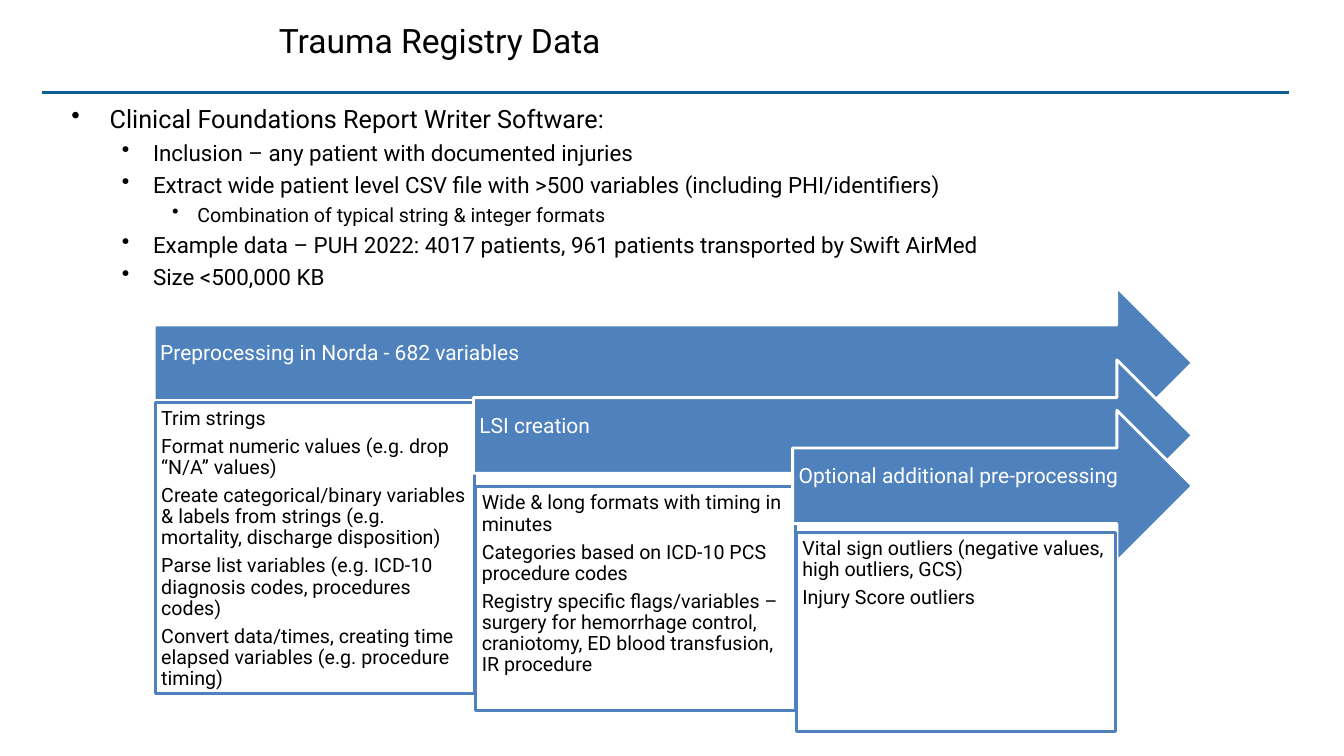
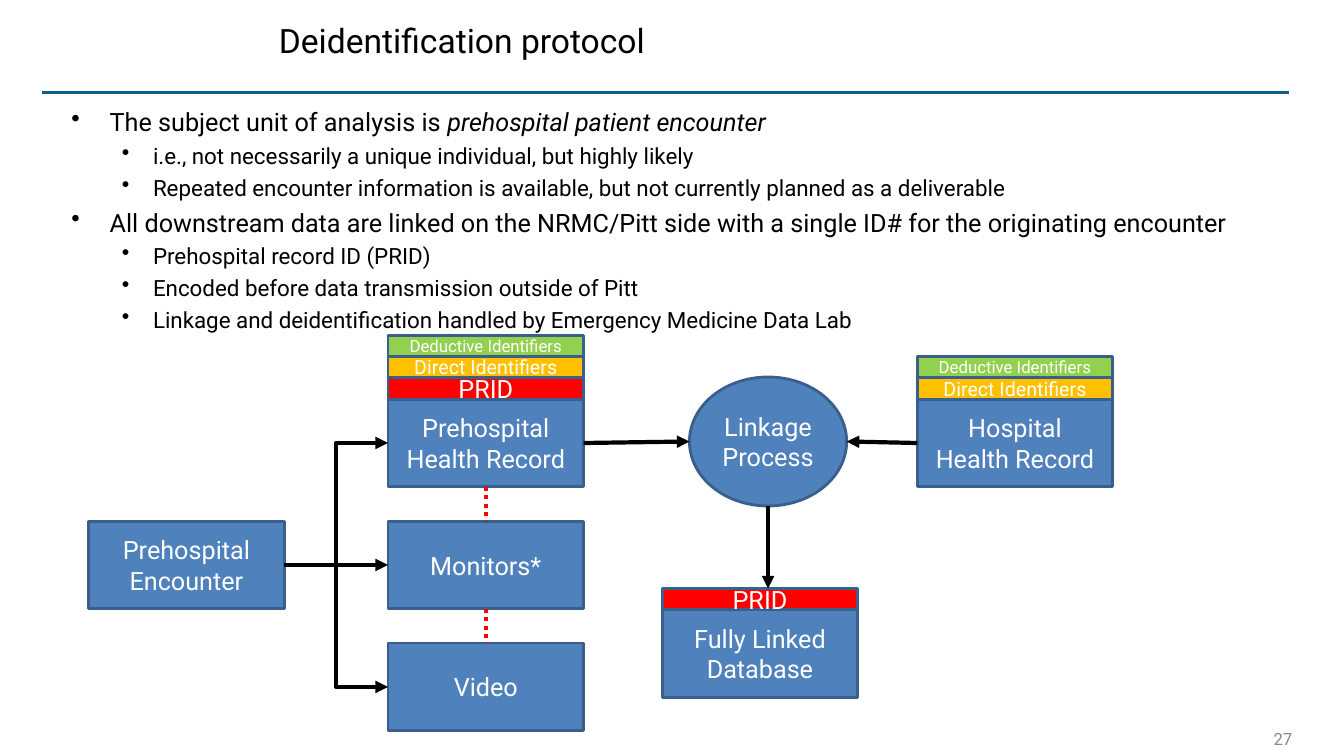
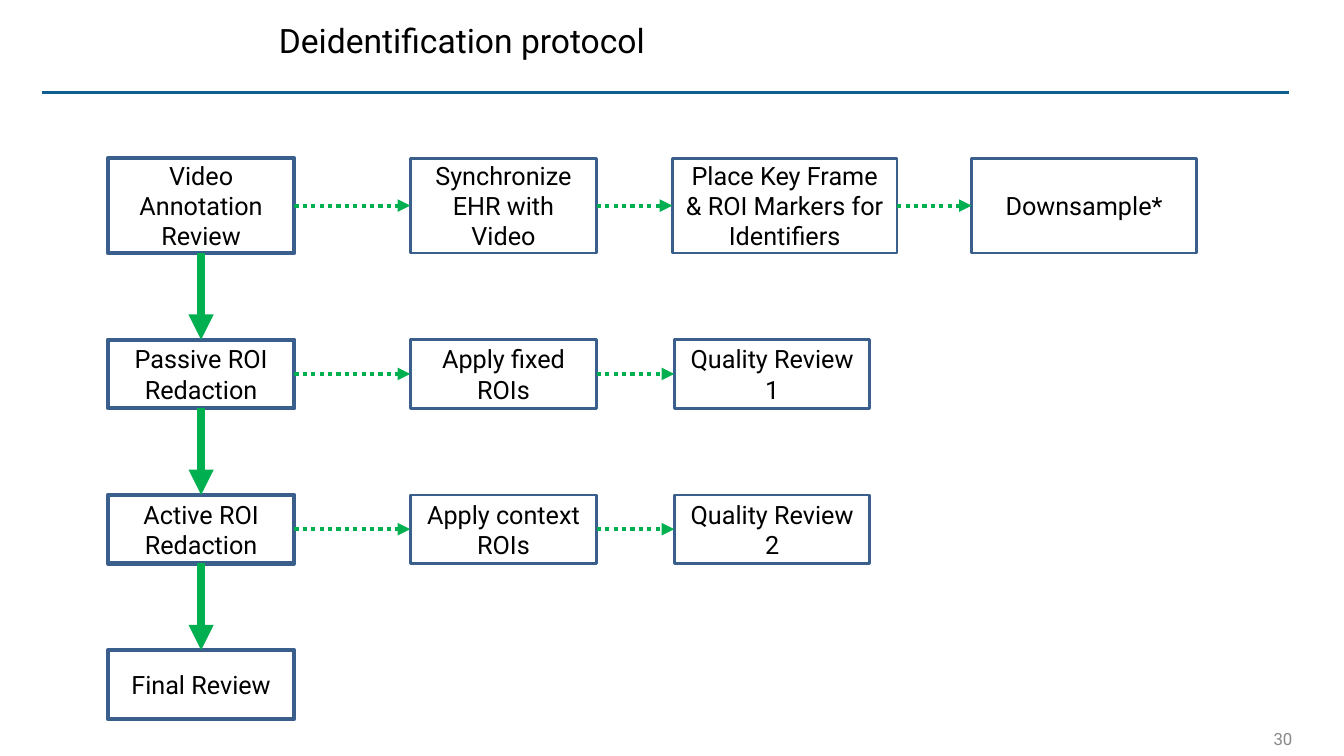
from dataclasses import dataclass
from lxml.etree import SubElement
from pptx import Presentation
from pptx.dml.color import RGBColor as RGB
from pptx.enum.dml import MSO_LINE as Dash
from pptx.enum.shapes import MSO_CONNECTOR as Conn, MSO_SHAPE as Shape
from pptx.enum.text import MSO_ANCHOR as Anchor, PP_ALIGN as Align
from pptx.oxml.ns import qn
from pptx.util import Inches, Pt

TOP, LEFT, BOTTOM, RIGHT = range(4)


@dataclass(frozen=True)
class Theme:
    font: str = "Roboto"
    ink: str = "000000"
    paper: str = "FFFFFF"
    rule: str = "0F5E90"
    muted: str = "898989"
    blue: str = "4F81BD"
    edge: str = "3A5F8C"
    red: str = "FF0000"
    amber: str = "FFC000"
    lime: str = "92D050"
    green: str = "00B050"
    title: int = 24
    label: int = 18
    levels: tuple = (18, 16, 14)
    banner: int = 15
    detail: int = 14
    small: int = 12


T = Theme()
COLS, ROWS = 80, 45


def g(n):
    return Inches(n / 6)


@dataclass(frozen=True)
class Box:
    x: float
    y: float
    w: float
    h: float

    def at(self, x, y, w, h):
        return Box(self.x + x, self.y + y, w, h)

    def place(self):
        return g(self.x), g(self.y), g(self.w), g(self.h)


PAGE = Box(0, 0, COLS, ROWS)


def add_run(p, text, size, color, italic=False):
    r = p.add_run()
    r.text = text
    r.font.name = T.font
    r.font.size = Pt(size)
    r.font.italic = italic
    r.font.color.rgb = RGB.from_string(color)


def next_par(tf, i):
    return tf.paragraphs[0] if i == 0 else tf.add_paragraph()


def add_shape(s, box, kind, fill, edge, width=2):
    sp = s.shapes.add_shape(kind, *box.place())
    sp.shadow.inherit = False
    sp.fill.solid()
    sp.fill.fore_color.rgb = RGB.from_string(fill)
    sp.line.color.rgb = RGB.from_string(edge)
    sp.line.width = Pt(width)
    return sp


def add_node(s, box, text, fill=T.blue, color=T.paper, size=T.label, width=2, kind=Shape.RECTANGLE):
    sp = add_shape(s, box, kind, fill, T.edge, width)
    tf = sp.text_frame
    tf.word_wrap = True
    tf.vertical_anchor = Anchor.MIDDLE
    for i, line in enumerate(text.split("\n")):
        p = next_par(tf, i)
        p.alignment = Align.CENTER
        add_run(p, line, size, color)
    return sp


def add_link(s, start, end, color, width=3, kind=Conn.STRAIGHT, dotted=False, arrow=True):
    c = s.shapes.add_connector(kind, 0, 0, 0, 0)
    a, b = start
    if isinstance(a, (int, float)):
        c.begin_x, c.begin_y = g(a), g(b)
    else:
        c.begin_connect(a, b)
    a, b = end
    if isinstance(a, (int, float)):
        c.end_x, c.end_y = g(a), g(b)
    else:
        c.end_connect(a, b)
    c.line.color.rgb = RGB.from_string(color)
    c.line.width = Pt(width)
    if dotted:
        c.line.dash_style = Dash.ROUND_DOT
    if arrow:
        SubElement(c.element.spPr.find(qn("a:ln")), qn("a:tailEnd"), type="triangle")
    SubElement(c.element.spPr, qn("a:effectLst"))


def add_page(prs, title, number=None):
    s = prs.slides.add_slide(prs.slide_layouts[5])
    add_link(s, (2.5, 5.52), (76.7, 5.52), T.rule, 1.75, arrow=False)
    ph = s.shapes.title
    ph.left, ph.top, ph.width, ph.height = PAGE.at(16, 0.4, 42.6, 4).place()
    tf = ph.text_frame
    tf.vertical_anchor = Anchor.MIDDLE
    p = tf.paragraphs[0]
    p.alignment = Align.LEFT
    add_run(p, title, T.title, T.ink)
    if number:
        tf = s.shapes.add_textbox(*PAGE.at(70.86, 43, 6.66, 1.92).place()).text_frame
        tf.word_wrap = True
        tf.vertical_anchor = Anchor.MIDDLE
        p = tf.paragraphs[0]
        p.alignment = Align.RIGHT
        add_run(p, number, T.small, T.muted)
    return s


def add_bullets(s, box, items):
    tf = s.shapes.add_textbox(*box.place()).text_frame
    tf.word_wrap = True
    indents = ((0.38, 0.38), (0.81, 0.31), (1.25, 0.25))
    for i, (level, text, *emphasis) in enumerate(items):
        p = next_par(tf, i)
        margin, hang = indents[level]
        pPr = p._p.get_or_add_pPr()
        pPr.set("marL", str(Inches(margin)))
        pPr.set("indent", str(-Inches(hang)))
        SubElement(pPr, qn("a:buChar"), char="•")
        p.level = level
        size = T.levels[level]
        if i:
            p.space_before = Pt(0.23 * size)
        add_run(p, text, size, T.ink)
        for part in emphasis:
            add_run(p, part, size, T.ink, italic=True)


def fill_step(sp, lines, size, color, anchor, insets):
    tf = sp.text_frame
    tf.word_wrap = True
    tf.vertical_anchor = anchor
    tf.margin_left, tf.margin_top, tf.margin_right, tf.margin_bottom = map(g, insets)
    for i, line in enumerate(lines):
        p = next_par(tf, i)
        p.alignment = Align.LEFT
        p.line_spacing = 0.9
        p.space_after = Pt(0.35 * size)
        add_run(p, line, size, color)


def add_steps(s, box, steps):
    for i, (heading, lines, arrow_y, panel_y, panel_h) in enumerate(steps):
        x = 19 * i
        arrow = add_shape(s, box.at(x, arrow_y, box.w - x, 9), Shape.RIGHT_ARROW, T.blue, T.paper)
        fill_step(arrow, [heading], T.banner, T.paper, Anchor.MIDDLE, (0.36, 0.36, 1.68, 1.44))
        panel = add_shape(s, box.at(19.08 * i + 0.06, panel_y, 19.02, panel_h), Shape.RECTANGLE, T.paper, T.blue)
        fill_step(panel, lines, T.detail, T.ink, Anchor.TOP, (0.36,) * 4)


STRIPS = {
    "PRID": (T.red, 18),
    "Direct Identifiers": (T.amber, 14),
    "Deductive Identifiers": (T.lime, 12),
}


def add_record(s, box, text, strips=()):
    body = add_node(s, box, text)
    h = 1.27
    for i, name in enumerate(strips, 1):
        fill, size = STRIPS[name]
        add_node(s, box.at(0, -h * i, box.w, h), name, fill, size=size)
    return body


def add_linkage(s, box):
    w, h, pitch = 11.64, 5.22, 7.26
    mid = 17.82
    names = list(STRIPS)
    encounter = add_record(s, box.at(0, pitch, w, h), "Prehospital Encounter")
    sources = [
        add_record(s, box.at(mid, pitch * i, w, h), text, strips)
        for i, (text, strips) in enumerate(
            (("Prehospital Health Record", names), ("Monitors*", ()), ("Video", ()))
        )
    ]
    hospital = add_record(s, box.at(49.32, 0, w, h), "Hospital\nHealth Record", names[1:])
    add_record(s, box.at(34.14, 12.54, w, h), "Fully Linked Database", names[:1])
    hub = box.at(35.76, -1.32, 9.36, 7.68)
    add_node(s, hub, "Linkage Process", kind=Shape.OVAL)

    for i, source in enumerate(sources):
        kind = Conn.STRAIGHT if i == 1 else Conn.ELBOW
        add_link(s, (encounter, RIGHT), (source, LEFT), T.ink, kind=kind)
    for upper, lower in zip(sources, sources[1:]):
        add_link(s, (upper, BOTTOM), (lower, TOP), T.red, dotted=True, arrow=False)
    cx, cy = hub.x + hub.w / 2, hub.y + hub.h / 2
    add_link(s, (sources[0], RIGHT), (hub.x, cy), T.ink)
    add_link(s, (hospital, LEFT), (hub.x + hub.w, cy), T.ink)
    add_link(s, (cx, hub.y + hub.h), (cx, box.y + 11.27), T.ink)


def add_review_flow(s, box, rows):
    previous = None
    for y, h, cells in rows:
        row = []
        for i, (text, x, w) in enumerate(cells):
            row.append(add_node(s, box.at(x, y, w, h), text, T.paper, T.ink, width=2 if i else 3))
        for a, b in zip(row, row[1:]):
            add_link(s, (a, RIGHT), (b, LEFT), T.green, dotted=True)
        if previous:
            add_link(s, (previous, BOTTOM), (row[0], TOP), T.green, 6)
        previous = row[0]


def registry_slide(prs):
    s = add_page(prs, "Trauma Registry Data")
    add_bullets(s, PAGE.at(3.66, 5.88, 72.66, 14.64), (
        (0, "Clinical Foundations Report Writer Software:"),
        (1, "Inclusion – any patient with documented injuries"),
        (1, "Extract wide patient level CSV file with >500 variables (including PHI/identifiers)"),
        (2, "Combination of typical string & integer formats"),
        (1, "Example data – PUH 2022: 4017 patients, 961 patients transported by Swift AirMed"),
        (1, "Size <500,000 KB"),
    ))
    add_steps(s, PAGE.at(9.18, 17.1, 61.8, 26.46), (
        ("Preprocessing in Norda - 682 variables", (
            "Trim strings",
            "Format numeric values (e.g. drop “N/A” values)",
            "Create categorical/binary variables & labels from strings (e.g. mortality, discharge disposition)",
            "Parse list variables (e.g. ICD-10 diagnosis codes, procedures codes)",
            "Convert data/times, creating time elapsed variables (e.g. procedure timing)",
        ), 0, 6.84, 17.34),
        ("LSI creation", (
            "Wide & long formats with timing in minutes",
            "Categories based on ICD-10 PCS procedure codes",
            "Registry specific flags/variables – surgery for hemorrhage control, "
            "craniotomy, ED blood transfusion, IR procedure",
        ), 4.32, 11.88, 13.32),
        ("Optional additional pre-processing", (
            "Vital sign outliers (negative values, high outliers, GCS)",
            "Injury Score outliers",
        ), 7.32, 14.58, 11.88),
    ))


def linkage_slide(prs):
    s = add_page(prs, "Deidentification protocol", "27")
    add_bullets(s, PAGE.at(3.66, 6.06, 72.66, 14), (
        (0, "The subject unit of analysis is ", "prehospital patient encounter"),
        (1, "i.e., not necessarily a unique individual, but highly likely"),
        (1, "Repeated encounter information is available, but not currently planned as a deliverable"),
        (0, "All downstream data are linked on the NRMC/Pitt side with a single ID# for the originating encounter"),
        (1, "Prehospital record ID (PRID)"),
        (1, "Encoded before data transmission outside of Pitt"),
        (1, "Linkage and deidentification handled by Emergency Medicine Data Lab"),
    ))
    add_linkage(s, PAGE.at(5.28, 23.76, 60.96, 19.74))


def review_slide(prs):
    s = add_page(prs, "Deidentification protocol", "30")
    w, second, third = 11.1, 18, 33.72
    add_review_flow(s, PAGE.at(6.42, 9.42, 64.8, 33.36), (
        (0, 5.64, (
            ("Video Annotation Review", 0, w),
            ("Synchronize EHR with Video", second, w),
            ("Place Key Frame & ROI Markers for Identifiers", 33.6, 13.38),
            ("Downsample*", 51.42, 13.38),
        )),
        (10.8, 4.08, (
            ("Passive ROI Redaction", 0, w),
            ("Apply fixed ROIs", second, w),
            ("Quality Review 1", third, 11.64),
        )),
        (20.04, 4.08, (
            ("Active ROI Redaction", 0, w),
            ("Apply context ROIs", second, w),
            ("Quality Review 2", third, 11.64),
        )),
        (29.28, 4.08, (("Final Review", 0, w),)),
    ))


def main():
    prs = Presentation()
    prs.slide_width, prs.slide_height = g(COLS), g(ROWS)
    registry_slide(prs)
    linkage_slide(prs)
    review_slide(prs)
    prs.save("out.pptx")


if __name__ == "__main__":
    main()
